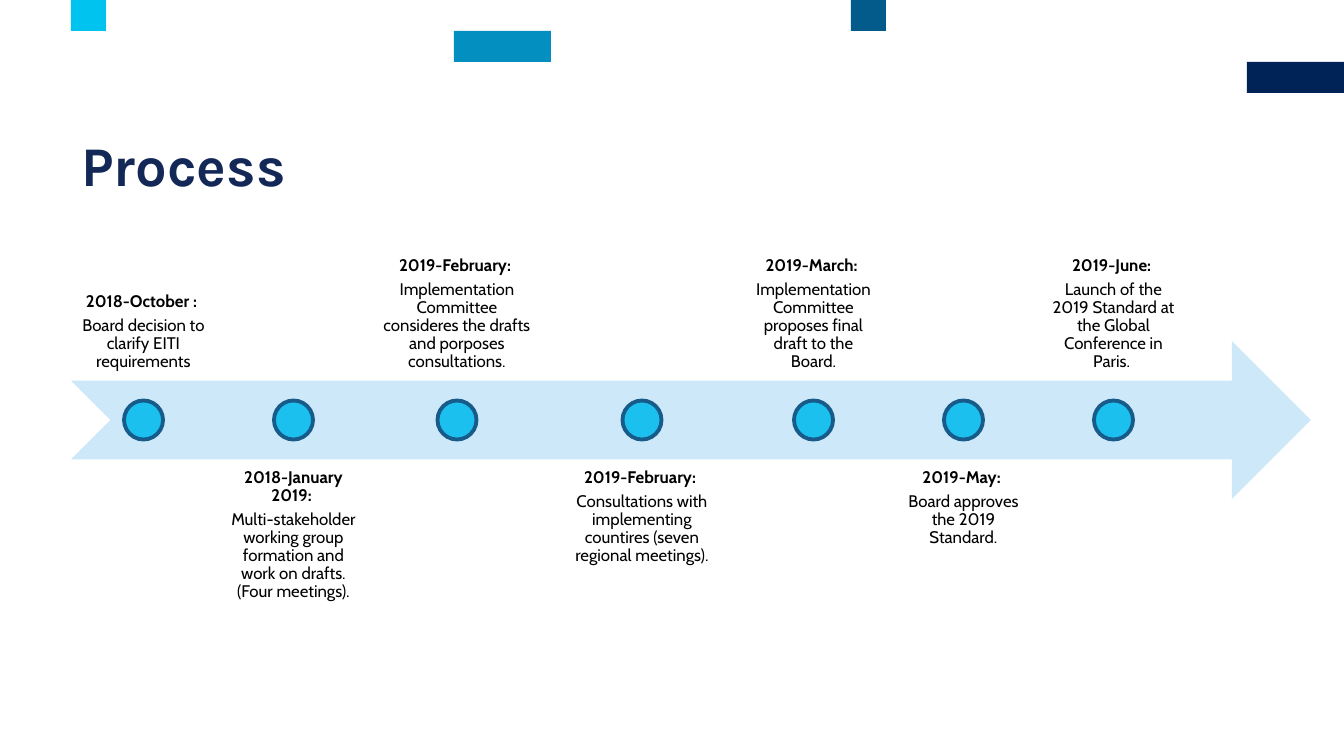
from pptx import Presentation
from pptx.dml.color import RGBColor
from pptx.enum.shapes import MSO_SHAPE
from pptx.enum.text import MSO_ANCHOR, PP_ALIGN
from pptx.util import Pt

NAVY = RGBColor(0x00, 0x23, 0x57)
BLUE = RGBColor(0x02, 0x5B, 0x8B)
TEAL = RGBColor(0x03, 0x8F, 0xBF)
CYAN = RGBColor(0x00, 0xC3, 0xF0)
TITLE_INK = RGBColor(0x13, 0x28, 0x56)
INK = RGBColor(0x00, 0x01, 0x00)
ARROW_BLUE = RGBColor(0xCD, 0xE8, 0xF8)
DOT_FILL = RGBColor(0x1C, 0xC0, 0xEE)
DOT_LINE = RGBColor(0x16, 0x5B, 0x89)

TITLE = "Process"
# left, top, width, height, colour
BLOCKS = [
    (1247, 62, 97, 31, NAVY),
    (851, 0, 35, 31, BLUE),
    (454, 31, 97, 31, TEAL),
    (71, 0, 35, 31, CYAN),
]
# date, event, column width
STEPS = [
    ("2018-October : ", "Board decision to clarify EITI requirements", 143),
    ("2018-January 2019: ", "Multi-stakeholder working group formation and "
     "work on drafts. (Four meetings).", 143),
    ("2019-February: ", "Implementation Committee consideres the drafts "
     "and porposes consultations.", 170),
    ("2019-February: ", "Consultations with implementing countires "
     "(seven regional meetings).", 186),
    ("2019-March: ", "Implementation Committee proposes final draft "
     "to the Board.", 143),
    ("2019-May: ", "Board approves the 2019 Standard.", 143),
    ("2019-June: ", "Launch of the 2019 Standard at the Global "
     "Conference in Paris. ", 143),
]

EMU_PER_PX = 914400 / 100.8
FIRST_LEFT, COLUMN_GAP, INSET = 72, 7, 9
ARROW_LEFT, ARROW_TOP, ARROW_WIDTH, ARROW_HEIGHT = 71, 341, 1240, 158
DOT_SIZE = 39
ARROW_MIDDLE = ARROW_TOP + ARROW_HEIGHT / 2
SHAFT_HALF = ARROW_HEIGHT / 4


def px(length):
    return round(length * EMU_PER_PX)


def add_filled(slide, kind, left, top, width, height, colour):
    shape = slide.shapes.add_shape(kind, px(left), px(top), px(width), px(height))
    shape.shadow.inherit = False
    shape.fill.solid()
    shape.fill.fore_color.rgb = colour
    shape.line.fill.background()
    return shape


def add_title(slide):
    title = slide.shapes.title
    title.left, title.top, title.width, title.height = map(px, (71, 132, 1203, 74))
    title.text_frame.text = TITLE
    title.text_frame.vertical_anchor = MSO_ANCHOR.MIDDLE
    heading = title.text_frame.paragraphs[0]
    heading.alignment = PP_ALIGN.LEFT
    heading.line_spacing = 0.89
    font = heading.runs[0].font
    font.name, font.size, font.bold = "Karla", Pt(40), True
    font.color.rgb = TITLE_INK


def add_label(slide, left, width, above, date, event):
    """Place a step's text on the upper or lower edge of the arrow shaft."""
    top = ARROW_MIDDLE - SHAFT_HALF - ARROW_HEIGHT if above else ARROW_MIDDLE + SHAFT_HALF
    label = slide.shapes.add_textbox(px(left), px(top), px(width), px(ARROW_HEIGHT))
    frame = label.text_frame
    frame.word_wrap = True
    frame.vertical_anchor = MSO_ANCHOR.BOTTOM if above else MSO_ANCHOR.TOP
    frame.margin_left = frame.margin_right = px(INSET)
    frame.margin_top = frame.margin_bottom = px(INSET)
    frame.text = f"{date}\n{event}"
    for paragraph, bold in zip(frame.paragraphs, (True, False)):
        paragraph.alignment = PP_ALIGN.CENTER
        paragraph.line_spacing = 0.9
        paragraph.space_after = Pt(4.2)
        font = paragraph.runs[0].font
        font.name, font.size, font.bold = "Cabin", Pt(12), bold
        font.color.rgb = INK


def add_timeline(slide):
    add_filled(slide, MSO_SHAPE.NOTCHED_RIGHT_ARROW, ARROW_LEFT, ARROW_TOP,
               ARROW_WIDTH, ARROW_HEIGHT, ARROW_BLUE)
    left = FIRST_LEFT
    for index, (date, event, width) in enumerate(STEPS):
        add_label(slide, left, width, index % 2 == 0, date, event)
        dot = add_filled(slide, MSO_SHAPE.OVAL, left + (width - DOT_SIZE) / 2,
                         ARROW_MIDDLE - DOT_SIZE / 2, DOT_SIZE, DOT_SIZE, DOT_FILL)
        dot.line.color.rgb = DOT_LINE
        dot.line.width = Pt(2.75)
        left += width + COLUMN_GAP


def main():
    deck = Presentation()
    deck.slide_width, deck.slide_height = px(1344), px(756)
    slide = deck.slides.add_slide(deck.slide_layouts.get_by_name("Title Only"))
    for block in BLOCKS:
        add_filled(slide, MSO_SHAPE.RECTANGLE, *block)
    add_title(slide)
    add_timeline(slide)
    deck.save("out.pptx")


if __name__ == "__main__":
    main()
